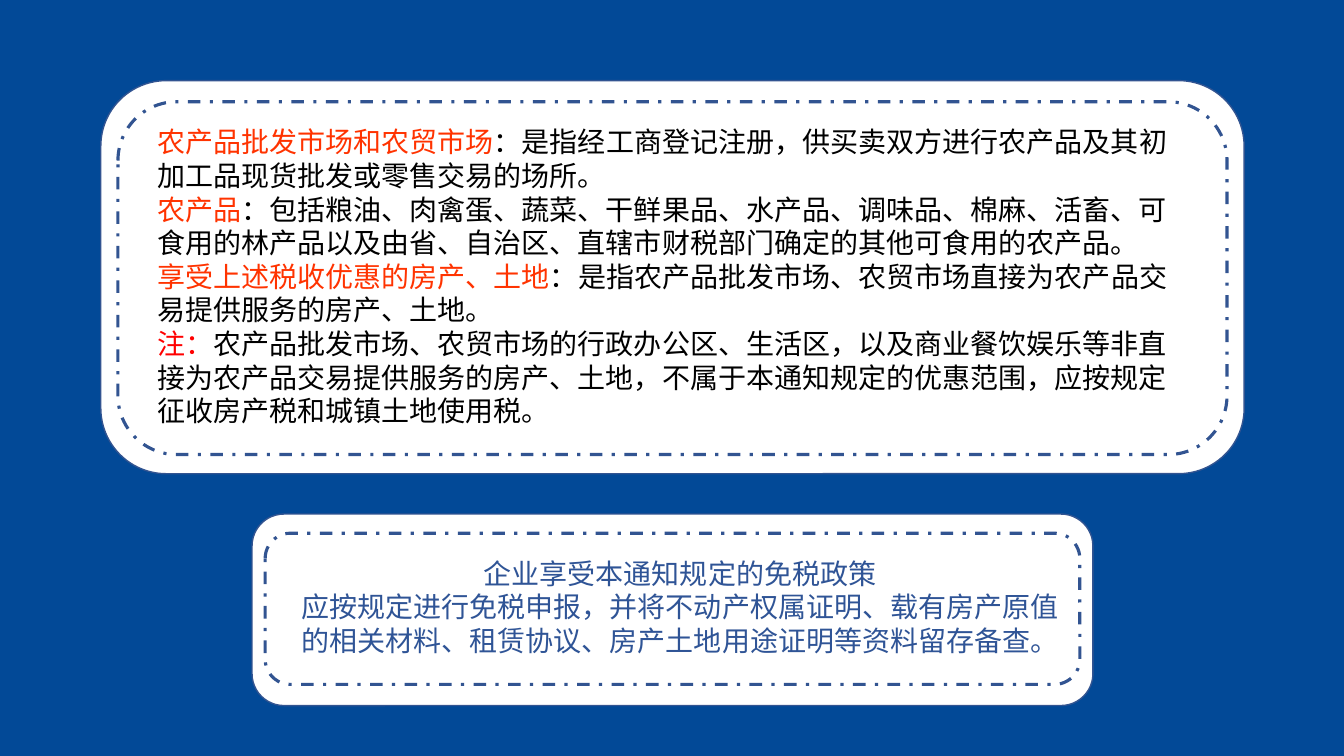
from dataclasses import dataclass

from lxml.etree import SubElement
from pptx import Presentation
from pptx.dml.color import RGBColor as Color
from pptx.enum.dml import MSO_LINE_DASH_STYLE as Dash
from pptx.enum.shapes import MSO_SHAPE as Shape
from pptx.enum.text import PP_ALIGN as Align
from pptx.oxml.ns import qn
from pptx.util import Inches, Pt


@dataclass(frozen=True)
class Theme:
    back: str = "024997"
    card: str = "FFFFFF"
    edge: str = "325491"
    term: str = "FF3300"
    note: str = "FF0000"
    body: str = "000000"
    blue: str = "2F5496"
    font: str = "Noto Sans CJK SC"
    size: int = 20
    lead: int = 24
    thin: float = 1
    thick: float = 2.25


class Deck:
    def __init__(self, theme):
        self.theme = theme
        self.show = Presentation()
        self.show.slide_width = Inches(13.33)
        self.show.slide_height = Inches(7.5)
        self.slide = self.show.slides.add_slide(self.show.slide_layouts[6])
        fill = self.slide.background.fill
        fill.solid()
        fill.fore_color.rgb = Color.from_string(theme.back)

    def box(self, area, width, fill=None, dash=None):
        shape = self.slide.shapes.add_shape(Shape.ROUNDED_RECTANGLE, *map(Inches, area))
        shape.shadow.inherit = False
        if fill:
            shape.fill.solid()
            shape.fill.fore_color.rgb = Color.from_string(fill)
        else:
            shape.fill.background()
        shape.line.color.rgb = Color.from_string(self.theme.edge)
        shape.line.width = Pt(width)
        if dash:
            shape.line.dash_style = dash

    def text(self, area, paras, align):
        frame = self.slide.shapes.add_textbox(*map(Inches, area)).text_frame
        frame.word_wrap = True
        for i, runs in enumerate(paras):
            para = frame.paragraphs[0] if i == 0 else frame.add_paragraph()
            para.alignment = align
            para.line_spacing = Pt(self.theme.lead)
            for words, color in runs:
                run = para.add_run()
                run.text = words
                font = run.font
                font.size = Pt(self.theme.size)
                font.color.rgb = Color.from_string(color)
                font.name = self.theme.font
                SubElement(run._r.get_or_add_rPr(), qn("a:ea"), typeface=self.theme.font)

    def panel(self, outer, inner, area, paras, align=Align.LEFT):
        self.box(outer, self.theme.thin, fill=self.theme.card)
        self.box(inner, self.theme.thick, dash=Dash.DASH_DOT)
        self.text(area, paras, align)

    def save(self):
        self.show.save("out.pptx")


def main():
    theme = Theme()
    deck = Deck(theme)
    terms = [
        ("农产品批发市场和农贸市场", theme.term,
         "：是指经工商登记注册，供买卖双方进行农产品及其初加工品现货批发或零售交易的场所。"),
        ("农产品", theme.term,
         "：包括粮油、肉禽蛋、蔬菜、干鲜果品、水产品、调味品、棉麻、活畜、可食用的林产品"
         "以及由省、自治区、直辖市财税部门确定的其他可食用的农产品。"),
        ("享受上述税收优惠的房产、土地", theme.term,
         "：是指农产品批发市场、农贸市场直接为农产品交易提供服务的房产、土地。"),
        ("注：", theme.note,
         "农产品批发市场、农贸市场的行政办公区、生活区，以及商业餐饮娱乐等非直接为农产品交易"
         "提供服务的房产、土地，不属于本通知规定的优惠范围，应按规定征收房产税和城镇土地使用税。"),
    ]
    rules = [
        "企业享受本通知规定的免税政策",
        "应按规定进行免税申报，并将不动产权属证明、载有房产原值的相关材料、租赁协议、"
        "房产土地用途证明等资料留存备查。",
    ]
    deck.panel((1, 0.8, 11.34, 3.9), (1.17, 1.01, 11, 3.5), (1.46, 1.19, 10.43, 3.13),
               [[(term, color), (words, theme.body)] for term, color, words in terms])
    deck.panel((2.5, 5.1, 8.34, 1.9), (2.63, 5.29, 8.08, 1.5), (2.84, 5.47, 7.81, 1.45),
               [[(words, theme.blue)] for words in rules], Align.CENTER)
    deck.save()


if __name__ == "__main__":
    main()
